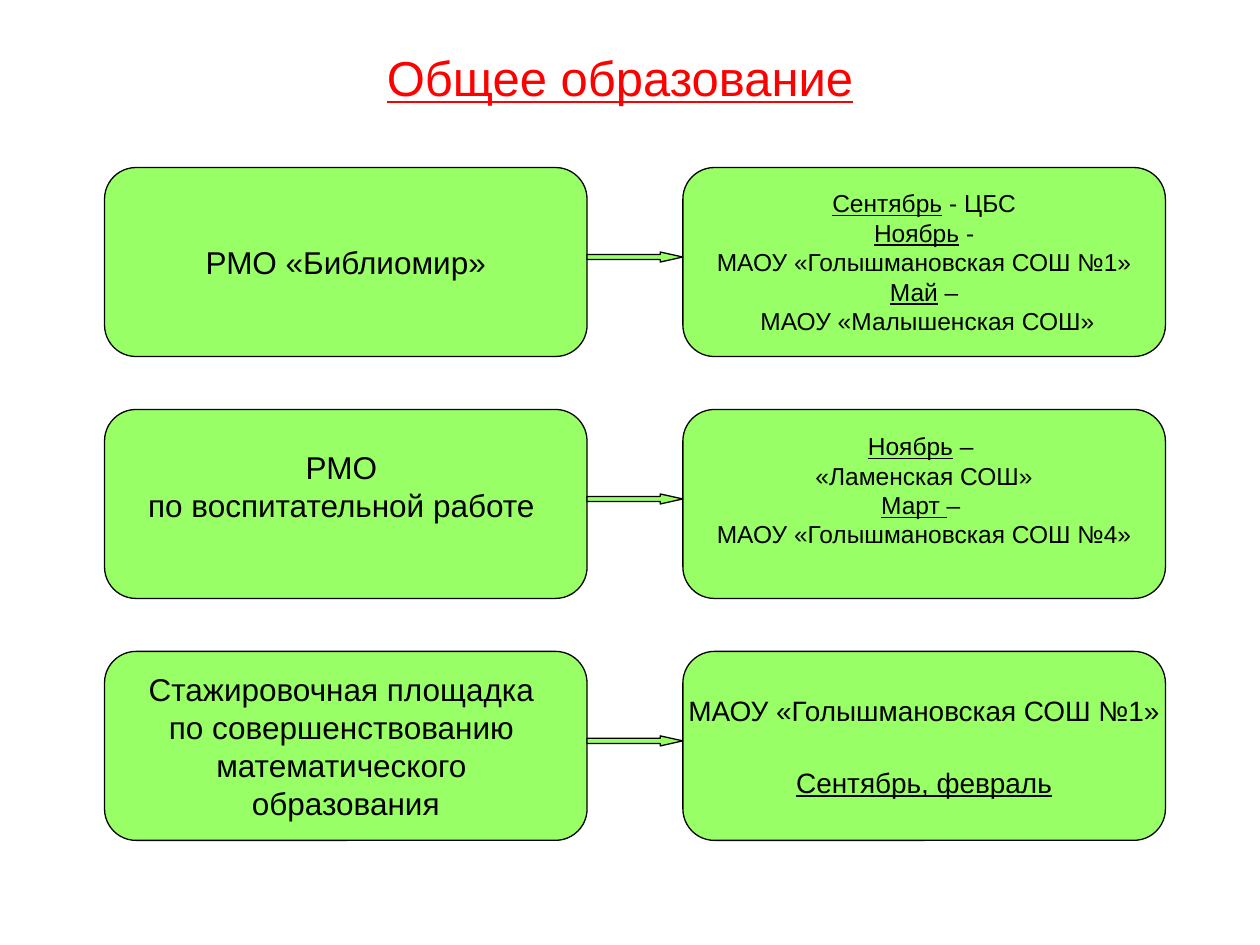
from dataclasses import dataclass

from pptx import Presentation
from pptx.dml.color import RGBColor
from pptx.enum import shapes, text
from pptx.util import Inches, Pt

FONT = "Arial"
GREEN = "99FF66"
BLACK = "000000"
RED = "FF0000"
LEFT_X, RIGHT_X = 0.83, 5.42
BOX_WIDTH, BOX_HEIGHT = 3.83, 1.5
FIRST_ROW, ROW_STEP = 1.33, 1.92
ARROW_DROP, ARROW_HEIGHT = 0.67, 0.08


@dataclass(frozen=True)
class Line:
    underlined: str = ""
    plain: str = ""
    space_before: float = 0


@dataclass(frozen=True)
class Card:
    lines: tuple[Line, ...]
    size: int
    bottom_inset: float = 0.05


@dataclass(frozen=True)
class Row:
    group: Card
    schedule: Card


ROWS = (
    Row(
        Card((Line(plain="РМО «Библиомир»"),), 18),
        Card((
            Line("Сентябрь", " - ЦБС"),
            Line("Ноябрь", " -"),
            Line(plain="МАОУ «Голышмановская СОШ №1»"),
            Line("Май", " –"),
            Line(plain=" МАОУ «Малышенская СОШ»"),
        ), 14),
    ),
    Row(
        Card((
            Line(plain="РМО "),
            Line(plain="по воспитательной работе "),
        ), 18, 0.34),
        Card((
            Line("Ноябрь", " – "),
            Line(plain="«Ламенская СОШ»"),
            Line("Март ", "– "),
            Line(plain="МАОУ «Голышмановская СОШ №4»"),
        ), 14, 0.27),
    ),
    Row(
        Card((
            Line(plain="Стажировочная площадка "),
            Line(plain="по совершенствованию "),
            Line(plain="математического "),
            Line(plain="образования"),
        ), 18),
        Card((
            Line(plain="МАОУ «Голышмановская СОШ №1»"),
            Line("Сентябрь, февраль", space_before=22),
        ), 16),
    ),
)


def color(value: str) -> RGBColor:
    return RGBColor.from_string(value)


def add_green_shape(page, kind, left: float, top: float, width: float, height: float):
    shape = page.shapes.add_shape(
        kind, Inches(left), Inches(top), Inches(width), Inches(height)
    )
    shape.shadow.inherit = False
    shape.fill.solid()
    shape.fill.fore_color.rgb = color(GREEN)
    shape.line.color.rgb = color(BLACK)
    shape.line.width = Pt(0.75)
    return shape


def style_paragraph(para, size: int, font_color: str) -> None:
    para.alignment = text.PP_ALIGN.CENTER
    para.font.name = FONT
    para.font.size = Pt(size)
    para.font.color.rgb = color(font_color)


def add_card(page, card: Card, left: float, top: float) -> None:
    box = add_green_shape(
        page, shapes.MSO_SHAPE.ROUNDED_RECTANGLE, left, top, BOX_WIDTH, BOX_HEIGHT
    )
    frame = box.text_frame
    frame.word_wrap = False
    frame.vertical_anchor = text.MSO_ANCHOR.MIDDLE
    frame.margin_bottom = Inches(card.bottom_inset)
    for index, line in enumerate(card.lines):
        para = frame.add_paragraph() if index else frame.paragraphs[0]
        style_paragraph(para, card.size, BLACK)
        if line.space_before:
            para.space_before = Pt(line.space_before)
        if line.underlined:
            span = para.add_run()
            span.text = line.underlined
            span.font.underline = True
        if line.plain:
            para.add_run().text = line.plain


def add_arrow(page, top: float) -> None:
    start = LEFT_X + BOX_WIDTH
    arrow = add_green_shape(
        page, shapes.MSO_SHAPE.RIGHT_ARROW,
        start, top + ARROW_DROP, RIGHT_X - start, ARROW_HEIGHT,
    )
    arrow.adjustments[1] = 2.25


def add_title(page) -> None:
    title = page.shapes.title
    title.left, title.top = Inches(0.42), Inches(0.33)
    title.width, title.height = Inches(9), Inches(0.78)
    title.text_frame.vertical_anchor = text.MSO_ANCHOR.TOP
    para = title.text_frame.paragraphs[0]
    para.text = "Общее образование"
    style_paragraph(para, 28, RED)
    para.font.underline = True


def main() -> None:
    deck = Presentation()
    deck.slide_width, deck.slide_height = Inches(10), Inches(7.5)
    page = deck.slides.add_slide(deck.slide_layouts[5])
    add_title(page)
    for index, row in enumerate(ROWS):
        top = FIRST_ROW + index * ROW_STEP
        add_card(page, row.group, LEFT_X, top)
        add_card(page, row.schedule, RIGHT_X, top)
        add_arrow(page, top)
    deck.save("out.pptx")


if __name__ == "__main__":
    main()
